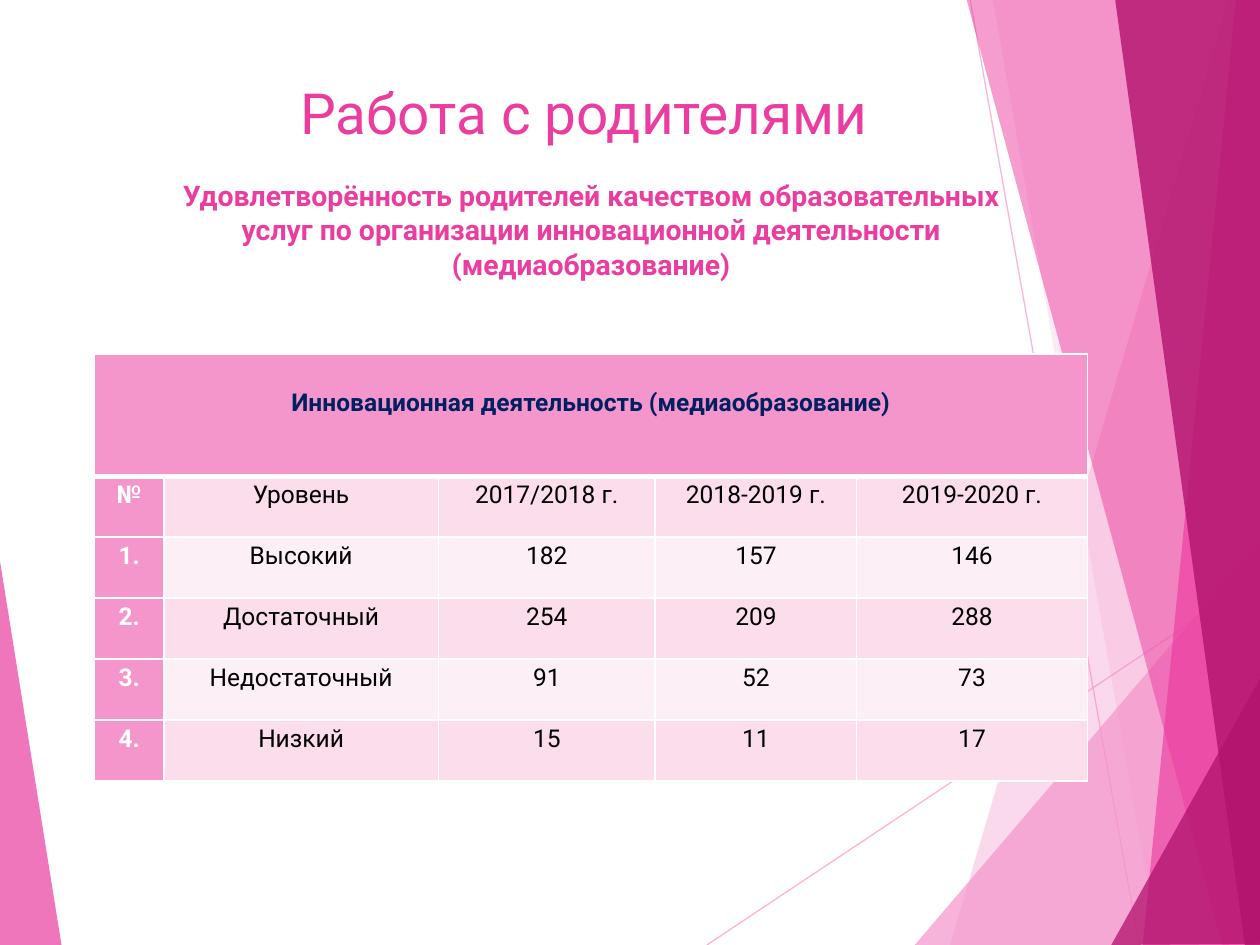
from lxml.etree import SubElement
from pptx import Presentation
from pptx.dml.color import RGBColor
from pptx.enum.shapes import MSO_CONNECTOR
from pptx.enum.text import MSO_ANCHOR, PP_ALIGN
from pptx.oxml.ns import qn
from pptx.util import Inches, Pt

THEME = {
    "font": "Roboto",
    "light": "F496CB", "main": "EB3D9F", "dark": "B2136D",
    "navy": "002060", "black": "000000", "white": "FFFFFF",
    "bands": ("FBDDEC", "FDEFF6"),
    "title": 32.4, "subtitle": 16.2, "table": 14,
}

# Content
TITLE = "Работа с родителями "
SUBTITLE = ("Удовлетворённость родителей качеством образовательных услуг "
            "по организации инновационной деятельности (медиаобразование)")
TABLE_HEAD = "Инновационная деятельность (медиаобразование)"
ROWS = [
    ("№", "Уровень", "2017/2018 г.", "2018-2019 г.", "2019-2020 г."),
    ("1.", "Высокий", "182", "157", "146"),
    ("2.", "Достаточный", "254", "209", "288"),
    ("3.", "Недостаточный", "91", "52", "73"),
    ("4.", "Низкий", "15", "11", "17"),
]
COL_WIDTHS = [0.55, 2.18, 1.72, 1.6, 1.83]
HEAD_HEIGHT, TABLE_HEIGHT = 0.97, 3.39

# Background decoration: line ends, then facets as colour, opacity %, corners
RAYS = [((5.61, 7.5), (10.01, 4.57)), ((7.7, 0), (9.04, 7.5))]
FACETS = [
    ("light", 36, [(9.75, 0), (7.54, 7.5), (10.02, 7.51), (10.01, 0.01)]),
    ("light", 20, [(7.88, -0.01), (9.19, 7.5), (10.01, 7.5), (10.01, -0.01)]),
    ("light", 72, [(7.26, 7.5), (10, 4.29), (10.01, 7.5)]),
    ("main", 50, [(7.67, -0.01), (9.7, 7.5), (10.01, 7.49), (10.01, -0.01)]),
    ("main", 66, [(9.81, -0.01), (9.07, 7.5), (10.01, 7.5), (10, -0.01)]),
    ("dark", 80, [(8.85, -0.01), (9.88, 7.5), (10.02, 7.5), (10, -0.01)]),
    ("dark", 76, [(8.82, 7.5), (10.02, 5.35), (10.02, 7.49)]),
    ("main", 70, [(-0.01, 4.39), (0.49, 7.51), (-0.01, 7.5)]),
]


def rgb(color):
    return RGBColor.from_string(color)


def set_opacity(shape, percent):
    color = shape.element.spPr.find(".//" + qn("a:srgbClr"))
    SubElement(color, qn("a:alpha"), val=str(percent * 1000))


def add_ray(s, start, end):
    ray = s.shapes.add_connector(MSO_CONNECTOR.STRAIGHT,
                                 *map(Inches, start + end))
    ray.line.color.rgb = rgb(THEME["light"])
    ray.line.width = Pt(0.75)
    set_opacity(ray, 70)
    SubElement(ray.element.spPr, qn("a:effectLst"))


def add_facet(s, color, opacity, corners):
    points = [(Inches(x), Inches(y)) for x, y in corners]
    builder = s.shapes.build_freeform(*points[0])
    builder.add_line_segments(points[1:], close=True)
    facet = builder.convert_to_shape()
    facet.fill.solid()
    facet.fill.fore_color.rgb = rgb(THEME[color])
    facet.line.fill.background()
    facet.shadow.inherit = False
    set_opacity(facet, opacity)


def style(p, size, color, bold=False):
    p.alignment = PP_ALIGN.CENTER
    for r in p.runs:
        r.font.name = THEME["font"]
        r.font.size = Pt(size)
        r.font.bold = bold
        r.font.color.rgb = rgb(color)


def set_borders(cell, bottom=1):
    tcPr = cell._tc.get_or_add_tcPr()
    widths = {"lnL": 1, "lnR": 1, "lnT": 1, "lnB": bottom}
    for i, (side, width) in enumerate(widths.items()):
        ln = tcPr.makeelement(qn("a:" + side), {"w": str(Pt(width))})
        fill = SubElement(ln, qn("a:solidFill"))
        SubElement(fill, qn("a:srgbClr"), val=THEME["white"])
        tcPr.insert(i, ln)


def fill_cell(cell, text, fill, color, bold, top=0, bottom=1):
    cell.text_frame.text = text
    cell.margin_left = cell.margin_right = Inches(0.07)
    cell.margin_top, cell.margin_bottom = Inches(top), 0
    p = cell.text_frame.paragraphs[0]
    p.line_spacing = 1.15
    style(p, THEME["table"], color, bold)
    cell.fill.solid()
    cell.fill.fore_color.rgb = rgb(fill)
    set_borders(cell, bottom)


prs = Presentation()
prs.slide_width, prs.slide_height = Inches(10), Inches(7.5)
s = prs.slides.add_slide(prs.slide_layouts[5])

# Decoration
for start, end in RAYS:
    add_ray(s, start, end)
for facet in FACETS:
    add_facet(s, *facet)

# Title and subtitle, brought in front of the decoration
title = s.shapes.title
title.element.getparent().append(title.element)
title.left, title.top = Inches(1.22), Inches(0)
title.width, title.height = Inches(6.94), Inches(2.18)
tf = title.text_frame
tf.word_wrap = True
tf.vertical_anchor = MSO_ANCHOR.TOP
tf.margin_top, tf.margin_bottom = Inches(0.62), 0
tf.text = TITLE + "\n" + SUBTITLE
heading, subtitle = tf.paragraphs
style(heading, THEME["title"], THEME["main"])
style(subtitle, THEME["subtitle"], THEME["main"], bold=True)
subtitle.space_before = Pt(18.5)

# Table
table = s.shapes.add_table(
    len(ROWS) + 1, len(COL_WIDTHS), Inches(0.75), Inches(2.81),
    Inches(sum(COL_WIDTHS)), Inches(TABLE_HEIGHT)).table
for column, width in zip(table.columns, COL_WIDTHS):
    column.width = Inches(width)
row_height = (TABLE_HEIGHT - HEAD_HEIGHT) / len(ROWS)
for i, row in enumerate(table.rows):
    row.height = Inches(row_height if i else HEAD_HEIGHT)

head = table.cell(0, 0)
head.merge(table.cell(0, len(COL_WIDTHS) - 1))
fill_cell(head, TABLE_HEAD, THEME["light"], THEME["navy"], True,
          top=0.24, bottom=3)
for i, values in enumerate(ROWS):
    for j, value in enumerate(values):
        cell = table.cell(i + 1, j)
        if j == 0:
            fill_cell(cell, value, THEME["light"], THEME["white"], True)
        else:
            fill_cell(cell, value, THEME["bands"][i % 2], THEME["black"], False)

prs.save("out.pptx")
